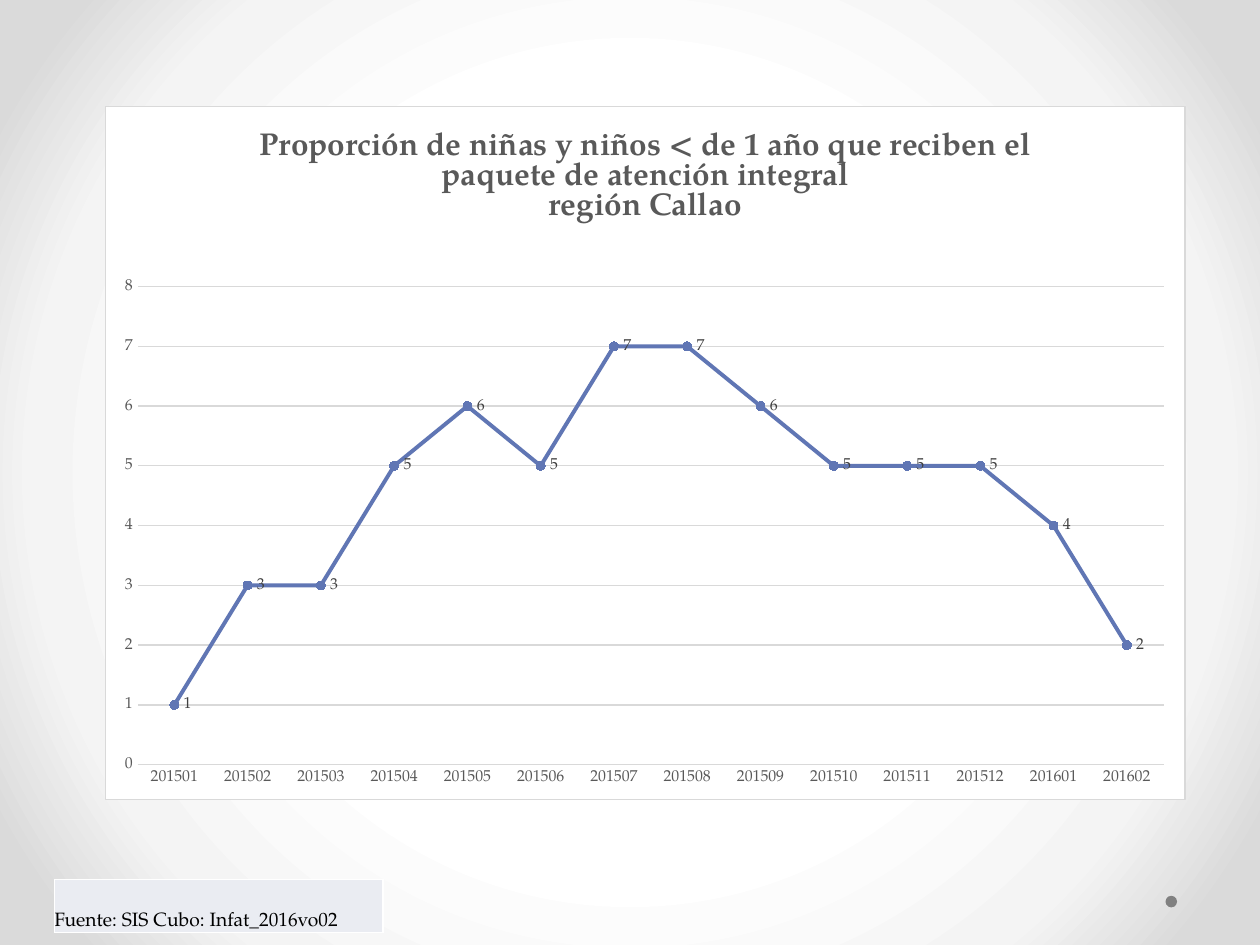
"""Build the slide with the monthly line chart of the Callao region and its source note."""
from dataclasses import dataclass

from pptx import Presentation
from pptx.chart.data import CategoryChartData
from pptx.dml.color import RGBColor
from pptx.enum.chart import XL_CHART_TYPE as ChartType
from pptx.enum.chart import XL_LABEL_POSITION as LabelPosition
from pptx.enum.chart import XL_MARKER_STYLE as MarkerStyle
from pptx.enum.chart import XL_TICK_MARK as TickMark
from pptx.enum.shapes import MSO_SHAPE as ShapeType
from pptx.enum.text import MSO_ANCHOR as Anchor
from pptx.oxml import parse_xml
from pptx.oxml.ns import nsdecls, qn
from pptx.util import Pt


@dataclass(frozen=True)
class Theme:
    font: str = "TeX Gyre Pagella"
    white: str = "FFFFFF"
    black: str = "000000"
    dot: str = "808080"
    rule: str = "D9D9D9"
    axis_text: str = "595959"
    label_text: str = "404040"
    series: str = "6076B4"
    note_fill: str = "EAECF2"
    gradient: tuple = ((50, "FFFFFF"), (76, "F4F4F4"), (92, "DADADA"))
    title_size: int = 18
    note_size: int = 11
    chart_size: int = 9


THEME = Theme()
TITLE = (
    "Proporción de niñas y niños < de 1 año que reciben el paquete de atención integral",
    "región Callao",
)
MONTHS = [f"2015{month:02}" for month in range(1, 13)] + ["201601", "201602"]
VALUES = (1, 3, 3, 5, 6, 5, 7, 7, 6, 5, 5, 5, 4, 2)


def style_font(font, size, color, bold=False):
    """Apply the theme typeface with a size, colour and weight."""
    font.name, font.size, font.bold = THEME.font, Pt(size), bold
    font.color.rgb = RGBColor.from_string(color)


def write_text(paragraph, text, **text_format):
    """Add one formatted run to a paragraph."""
    run = paragraph.add_run()
    run.text = text
    style_font(run.font, **text_format)


def paint(fill, color):
    """Make a fill solid."""
    fill.solid()
    fill.fore_color.rgb = RGBColor.from_string(color)


def draw_line(line, color, width):
    """Set the colour and width of a line."""
    paint(line.fill, color)
    line.width = Pt(width)


def line_xml(tag, color, width):
    """Return the XML of a solid line."""
    return (
        f'<a:{tag} {nsdecls("a")} w="{Pt(width)}"><a:solidFill>'
        f'<a:srgbClr val="{color}"/></a:solidFill></a:{tag}>'
    )


def set_background(slide):
    """Give the slide a radial gradient."""
    slide.background.fill.gradient()
    gradient = next(slide.element.iter(qn("a:gradFill")))
    stops = "".join(
        f'<a:gs pos="{position * 1000}"><a:srgbClr val="{color}"/></a:gs>'
        for position, color in THEME.gradient
    )
    radial = parse_xml(
        f'<a:gradFill {nsdecls("a")} rotWithShape="1"><a:gsLst>{stops}</a:gsLst>'
        '<a:path path="circle"><a:fillToRect l="50000" t="50000" r="50000" b="50000"/>'
        "</a:path></a:gradFill>"
    )
    gradient.getparent().replace(gradient, radial)


def add_dot(slide, left, top, diameter):
    """Add a plain filled circle."""
    dot = slide.shapes.add_shape(
        ShapeType.OVAL, Pt(left), Pt(top), Pt(diameter), Pt(diameter)
    )
    dot.shadow.inherit = False
    paint(dot.fill, THEME.dot)
    dot.line.fill.background()


def frame_chart(chart):
    """Fill and outline the chart area and place the plot inside it."""
    chart_part = chart.element.find(qn("c:chart"))
    chart_part.addnext(parse_xml(
        f'<c:spPr {nsdecls("c", "a")}><a:solidFill><a:srgbClr val="{THEME.white}"/>'
        f'</a:solidFill>{line_xml("ln", THEME.rule, 0.75)}</c:spPr>'
    ))
    plot_area = chart_part.find(qn("c:plotArea"))
    for layout in plot_area.findall(qn("c:layout")):
        plot_area.remove(layout)
    places = "".join(
        f'<c:{name} val="{value}"/>'
        for name, value in (("x", 0.03), ("y", 0.26), ("w", 0.95), ("h", 0.69))
    )
    plot_area.insert(0, parse_xml(
        f'<c:layout {nsdecls("c")}><c:manualLayout><c:layoutTarget val="inner"/>'
        f'<c:xMode val="edge"/><c:yMode val="edge"/>{places}</c:manualLayout></c:layout>'
    ))


def style_axes(chart):
    """Format both axes and the horizontal gridlines."""
    for axis in (chart.category_axis, chart.value_axis):
        axis.major_tick_mark = axis.minor_tick_mark = TickMark.NONE
        style_font(axis.tick_labels.font, THEME.chart_size, THEME.axis_text)
    draw_line(chart.category_axis.format.line, THEME.rule, 0.75)
    values = chart.value_axis
    values.minimum_scale, values.maximum_scale, values.major_unit = 0, 8, 1
    values.tick_labels.number_format = "0"
    values.tick_labels.number_format_is_linked = False
    values.format.line.fill.background()
    draw_line(values.major_gridlines.format.line, THEME.rule, 0.75)


def style_series(series):
    """Format the line, its markers and its value labels."""
    series.smooth = False
    draw_line(series.format.line, THEME.series, 2.25)
    series.marker.style, series.marker.size = MarkerStyle.CIRCLE, 5
    paint(series.marker.format.fill, THEME.series)
    draw_line(series.marker.format.line, THEME.series, 0.75)
    labels = series.data_labels
    labels.show_value = True
    labels.position = LabelPosition.RIGHT
    labels.number_format, labels.number_format_is_linked = "0", False
    style_font(labels.font, THEME.chart_size, THEME.label_text)


def add_line_chart(slide, left, top, width, height):
    """Add the titled line chart."""
    data = CategoryChartData(number_format="0")
    data.categories = MONTHS
    data.add_series("Series 1", VALUES)
    chart = slide.shapes.add_chart(
        ChartType.LINE_MARKERS, Pt(left), Pt(top), Pt(width), Pt(height), data
    ).chart
    chart.has_legend = False
    style_font(chart.font, 10, THEME.black)
    chart.plots[0].vary_by_categories = False
    title = chart.chart_title.text_frame
    for index, text in enumerate(TITLE):
        paragraph = title.add_paragraph() if index else title.paragraphs[0]
        write_text(paragraph, text, size=THEME.title_size, color=THEME.axis_text, bold=True)
    frame_chart(chart)
    style_axes(chart)
    style_series(chart.plots[0].series[0])


def add_note(slide, text, left, top, width, height):
    """Add the source note as a one-cell table."""
    table = slide.shapes.add_table(1, 1, Pt(left), Pt(top), Pt(width), Pt(height)).table
    cell = table.cell(0, 0)
    cell.margin_left = cell.margin_right = cell.margin_top = cell.margin_bottom = 0
    cell.vertical_anchor = Anchor.BOTTOM
    write_text(cell.text_frame.paragraphs[0], text, size=THEME.note_size, color=THEME.black)
    paint(cell.fill, THEME.note_fill)
    properties = cell.fill._xPr
    for index, tag in enumerate(("lnL", "lnR", "lnT", "lnB")):
        properties.insert(index, parse_xml(line_xml(tag, THEME.white, 1)))


def main():
    """Build and save the presentation."""
    presentation = Presentation()
    presentation.slide_width, presentation.slide_height = Pt(720), Pt(540)
    slide = presentation.slides.add_slide(presentation.slide_layouts[6])
    set_background(slide)
    add_dot(slide, 666, 511.9, 6.6)
    add_line_chart(slide, 59.8, 60.5, 617.8, 396.7)
    add_note(slide, "Fuente: SIS Cubo: Infat_2016vo02", 31, 502.6, 187.9, 30.2)
    presentation.save("out.pptx")


if __name__ == "__main__":
    main()
